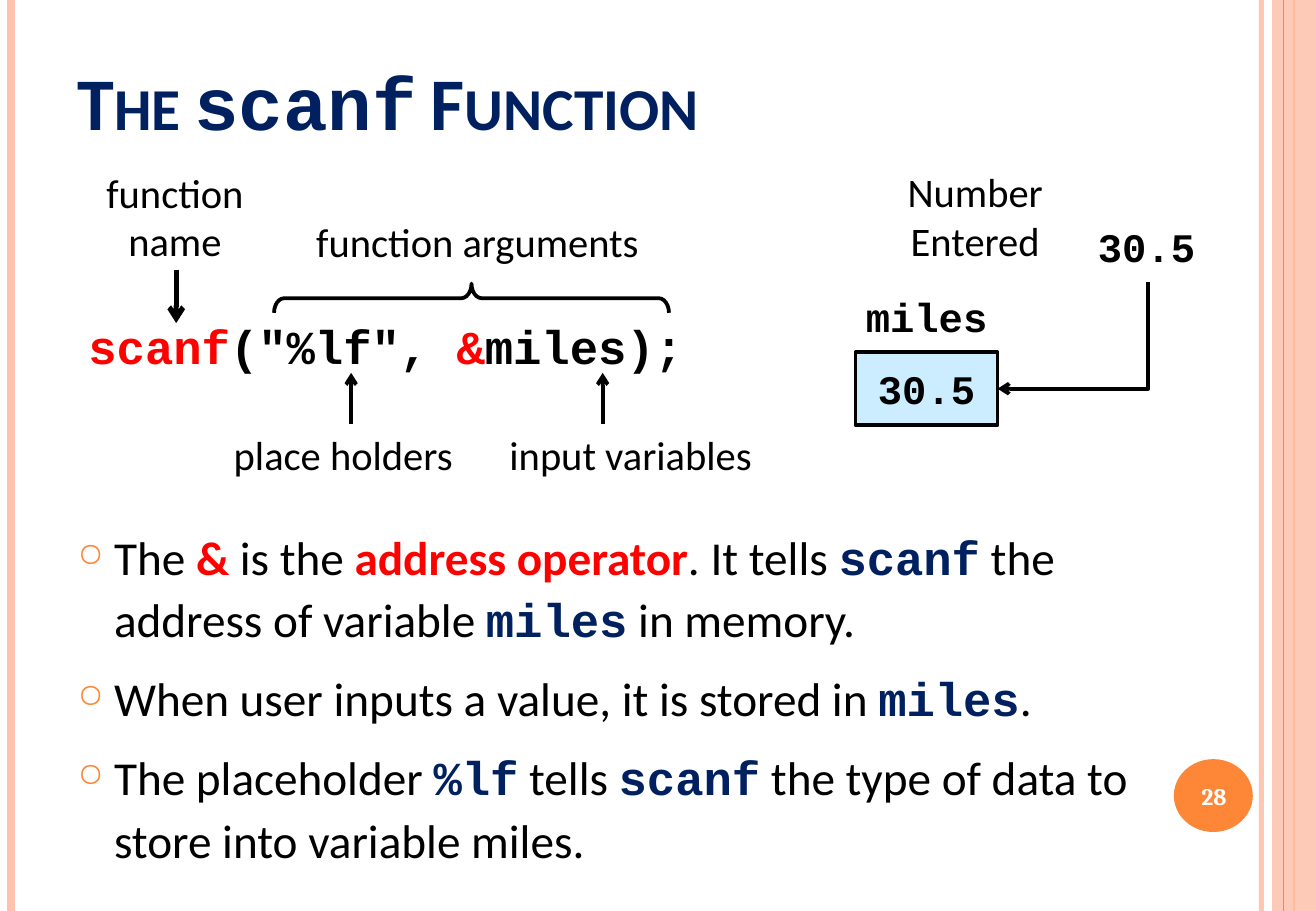
"""Build the slide that explains the scanf function."""
from lxml import etree
from pptx import Presentation
from pptx import util as u
from pptx.dml.color import RGBColor
from pptx.enum import shapes, text
from pptx.oxml import ns

COLORS = {"peach": "FEC3AE", "orange": "FE8637", "navy": "002060", "red": "FF0000",
          "black": "000000", "white": "FFFFFF", "sky": "CCECFF"}
SANS, MONO, SERIF = "Calibri", "Courier New", "Cambria"
STYLES = {"plain": (SANS, "black", False), "code": (MONO, "black", True),
          "key": (SANS, "red", True), "name": (MONO, "navy", True),
          "call": (MONO, "red", True), "heading": (SANS, "navy", True),
          "page": (SERIF, "white", True)}
WIDTH, HEIGHT = 10.83, 7.5

deck = Presentation()
deck.slide_width, deck.slide_height = u.Inches(WIDTH), u.Inches(HEIGHT)
slide = deck.slides.add_slide(deck.slide_layouts[6])


def write(content, at, style="plain", size=24, align="LEFT", anchor="TOP", side=0.1,
          fill=None, border=None, kind=None, bullet=None):
    """Put paragraphs of plain strings or (text, style) runs at a place on the slide."""
    place = [u.Inches(length) for length in at]
    if kind:
        holder = slide.shapes.add_shape(kind, *place)
        holder.shadow.inherit = False
    else:
        holder = slide.shapes.add_textbox(*place)
    if fill:
        holder.fill.solid()
        holder.fill.fore_color.rgb = RGBColor.from_string(COLORS[fill])
    if border:
        stroke(holder, "black", border)
    else:
        holder.line.fill.background()
    frame = holder.text_frame
    frame.word_wrap = True
    frame.vertical_anchor = getattr(text.MSO_ANCHOR, anchor)
    frame.margin_left = frame.margin_right = u.Inches(side)
    for number, runs in enumerate(content):
        paragraph = frame.add_paragraph() if number else frame.paragraphs[0]
        paragraph.alignment = getattr(text.PP_ALIGN, align)
        if bullet:
            paragraph.line_spacing, paragraph.space_before = 1.1, u.Pt(10)
            layout = paragraph._p.get_or_add_pPr()
            layout.set("marL", str(u.Inches(0.3)))
            layout.set("indent", str(-u.Inches(0.3)))
            color = etree.SubElement(layout, ns.qn("a:buClr"))
            etree.SubElement(color, ns.qn("a:srgbClr"), val=COLORS["orange"])
            etree.SubElement(layout, ns.qn("a:buSzPct"), val="70000")
            etree.SubElement(layout, ns.qn("a:buChar"), char=bullet)
        for words, look in [(runs, style)] if isinstance(runs, str) else runs:
            run = paragraph.add_run()
            run.text = words
            run.font.size = u.Pt(size)
            run.font.name, color, run.font.bold = STYLES[look]
            run.font.color.rgb = RGBColor.from_string(COLORS[color])
            if look == "heading":
                run.font._element.set("cap", "small")
    return holder


def stroke(outline, color, width, arrow=None):
    """Colour a line and give it an optional arrowhead at one end."""
    outline.line.color.rgb = RGBColor.from_string(COLORS[color])
    outline.line.width = u.Pt(width)
    if arrow:
        etree.SubElement(outline.line._get_or_add_ln(), ns.qn(f"a:{arrow}"), type="arrow")
    if outline._element.spPr.find(ns.qn("a:effectLst")) is None:
        etree.SubElement(outline._element.spPr, ns.qn("a:effectLst"))


rectangle = shapes.MSO_SHAPE.RECTANGLE
stripes = [(10.38, "peach", 3), (0.09, "peach", 4.5), (10.65, "orange", 1.5),
           (10.56, "orange", 0.75)]
arrows = [(1.45, 2.22, 2.66, 3), (2.89, 3.49, 3.07, 2.25), (4.96, 3.49, 3.07, 2.25)]
lines = [(x, 0, HEIGHT, color, width, None) for x, color, width in stripes]
lines += [(x, start, end, "black", width, "tailEnd") for x, start, end, width in arrows]
for number, (x, start, end, color, width, arrow) in enumerate(lines):
    if number == len(stripes) - 1:
        band = write([], (10.47, 0, 0.36, HEIGHT), kind=rectangle, fill="peach")
    line = slide.shapes.add_connector(shapes.MSO_CONNECTOR.STRAIGHT, u.Inches(x),
                                      u.Inches(start), u.Inches(x), u.Inches(end))
    stroke(line, color, width, arrow)
    if number == 0:
        edge = line
for part, opacity in ((edge, 93), (band, 87)):
    tint = next(part._element.spPr.iter(ns.qn("a:srgbClr")))
    etree.SubElement(tint, ns.qn("a:alpha"), val=str(opacity * 1000))

write([], (9.66, 6.25, 0.65, 0.6), kind=shapes.MSO_SHAPE.OVAL, fill="orange")
write(["28"], (9.63, 6.27, 0.72, 0.57), "page", 14, "CENTER", "MIDDLE")

write([[("The ", "heading"), ("scanf", "name"), (" Function", "heading")]],
      (0.54, 0.25, 9.75, 1), size=44, anchor="BOTTOM")
write([[("The ", "plain"), ("&", "key"), (" is the ", "plain"), ("address operator", "key"),
        (". It tells ", "plain"), ("scanf", "name"),
        (" the address of variable ", "plain"), ("miles", "name"), (" in memory.", "plain")],
       [("When user inputs a value, it is stored in ", "plain"), ("miles", "name"),
        (".", "plain")],
       [("The placeholder ", "plain"), ("%lf", "name"), (" tells ", "plain"),
        ("scanf", "name"),
        (" the type of data to store into variable miles.", "plain")]],
      (0.54, 4.25, 9.12, 3.08), size=28, bullet="○")

write([[("scanf", "call"), ('("%lf", ', "code"), ("&", "call"), ("miles);", "code")]],
      (0.63, 2.56, 5.64, 0.57), size=28)
for label, place in ((["function", "name"], (0.72, 1.33, 1.44, 0.91)),
                     (["function arguments"], (2.26, 1.74, 3.34, 0.51)),
                     (["place holders"], (1.72, 3.49, 2.21, 0.51)),
                     (["input variables"], (3.97, 3.49, 2.44, 0.51))):
    write(label, place, align="CENTER")

brace = slide.shapes.add_shape(shapes.MSO_SHAPE.RIGHT_BRACE, u.Inches(3.76), u.Inches(0.83),
                               u.Inches(0.24), u.Inches(3.25))
brace.rotation = 270
brace.adjustments[0] = 0.35
brace.fill.background()
stroke(brace, "black", 2.25)

for label, place, style, fill, border, side in (
        ("30.5", (7.04, 2.9, 1.17, 0.6), "code", "sky", 2.25, 0.1),
        ("miles", (7.04, 2.37, 1.17, 0.47), "code", "white", None, 0),
        ("30.5", (8.85, 1.79, 1.17, 0.47), "code", "white", None, 0),
        ("Number Entered", (7.22, 1.33, 1.61, 0.89), "plain", "white", None, 0)):
    write([label], place, style, align="CENTER", anchor="MIDDLE", side=side, fill=fill,
          border=border, kind=rectangle)

pen = slide.shapes.build_freeform(u.Inches(8.21), u.Inches(3.2))
pen.add_line_segments([(u.Inches(9.45), u.Inches(3.2)), (u.Inches(9.45), u.Inches(2.32))],
                      close=False)
entry = pen.convert_to_shape()
entry.fill.background()
stroke(entry, "black", 2.25, "headEnd")

deck.save("out.pptx")
